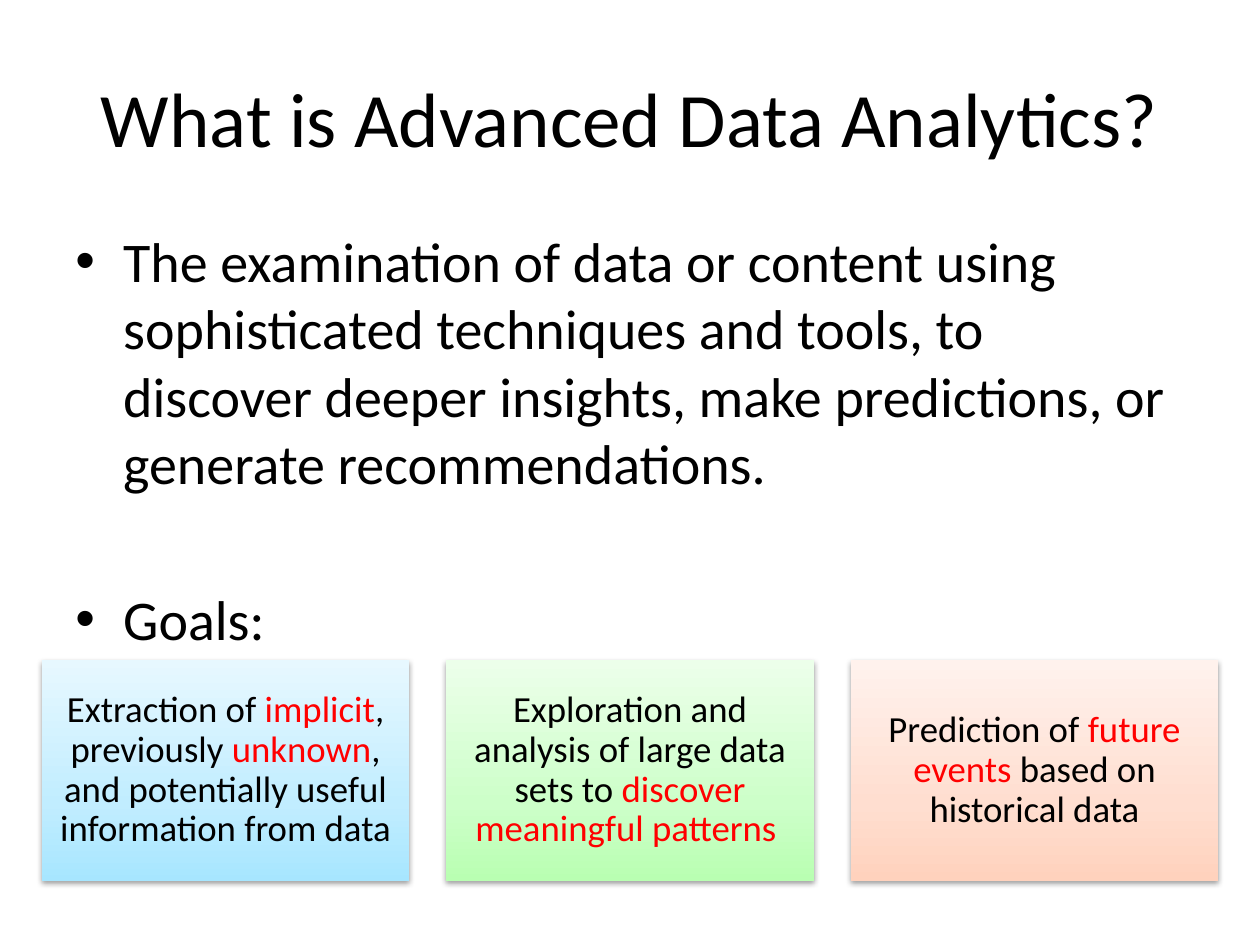
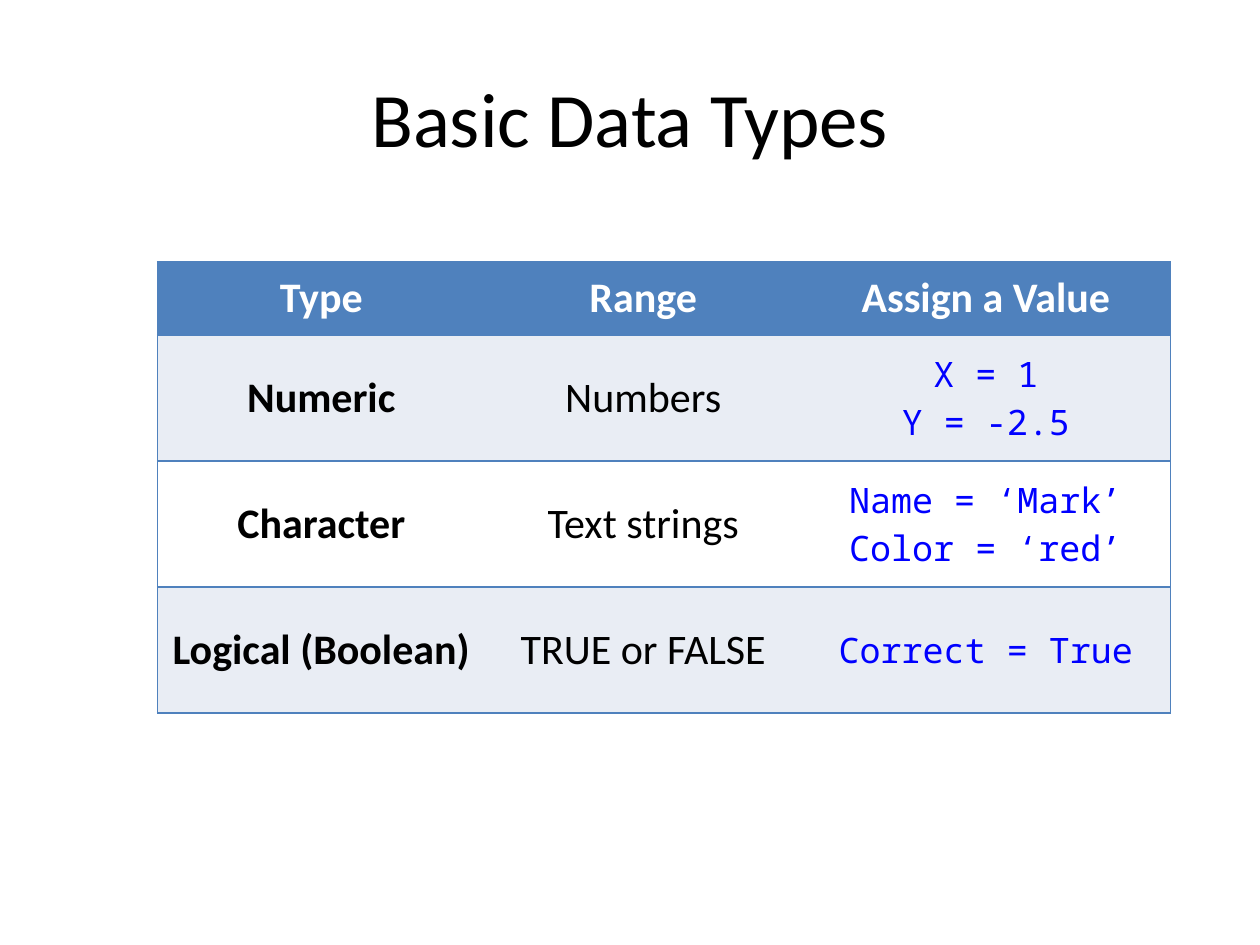
"""Build two slides: the goals of data analytics and the basic data types."""
from dataclasses import dataclass

from lxml.etree import SubElement as Sub
from pptx import Presentation
from pptx.dml.color import RGBColor as Rgb
from pptx.enum.shapes import MSO_SHAPE as Shape
from pptx.enum.text import MSO_ANCHOR as Anchor, PP_ALIGN as Align
from pptx.oxml.ns import qn
from pptx.util import Inches as In, Pt


@dataclass(frozen=True)
class Theme:
    sans: str = "Calibri"
    mono: str = "Noto Sans Mono"
    ink: str = "000000"
    paper: str = "FFFFFF"
    mark: str = "FF0000"
    code: str = "0000FF"
    head: str = "4F81BD"
    band: str = "E9EDF4"
    title: int = 44
    body: int = 32
    cell: int = 24
    goal: int = 21
    small: int = 20


T = Theme()
WIDE, HIGH = 10, 7.5
EDGE = WIDE / 20

POINTS = [
    ("The\u00a0examination of data or content using sophisticated techniques and tools, "
     "to discover deeper insights, make predictions, or generate recommendations.", 0),
    ("Goals:", 51),
]
GOALS = [
    (("A7E6FF", "C1EDFF", "E7F8FF"),
     [("Extraction of ", T.ink), ("implicit", T.mark), (", previously ", T.ink),
      ("unknown", T.mark), (", and potentially useful information from data", T.ink)]),
    (("B9FFB2", "CDFFC9", "ECFFEA"),
     [("Exploration and analysis of large data sets to ", T.ink),
      ("discover meaningful patterns ", T.mark)]),
    (("FFD2BD", "FFDED0", "FFF2ED"),
     [("Prediction of ", T.ink), ("future events", T.mark),
      (" based on historical data", T.ink)]),
]
STOPS = (0, 35, 100)
BOX = dict(left=0.33, top=5.24, step=3.21, wide=2.92, high=1.75)

HEADS = ["Type", "Range", "Assign a Value"]
TYPES = [
    ["Numeric", "Numbers", "X = 1\nY = -2.5"],
    ["Character", "Text strings", "Name = ‘Mark’\nColor = ‘red’"],
    ["Logical (Boolean)", "TRUE or FALSE", "Correct = True"],
]
COLS = (2.6, 2.51, 2.93)
ROWS = (0.58, 1, 1, 1)
PLAIN = "{2D5ABB26-0587-4C30-8999-92F81FD0307C}"


def node(top, tag, **attrs):
    return Sub(top, qn(tag), {key: str(val) for key, val in attrs.items()})


def add_run(para, text, size, color=T.ink, font=T.sans, bold=False):
    run = para.add_run()
    run.text = text
    run.font.size, run.font.name, run.font.bold = Pt(size), font, bold
    run.font.color.rgb = Rgb.from_string(color)


def add_para(frame, first, align=Align.CENTER):
    para = frame.paragraphs[0] if first else frame.add_paragraph()
    para.alignment = align
    return para


def add_text(slide, left, top, wide, high, anchor=Anchor.TOP):
    frame = slide.shapes.add_textbox(In(left), In(top), In(wide), In(high)).text_frame
    frame.word_wrap, frame.vertical_anchor = True, anchor
    return frame


def add_slide(deck, title):
    slide = deck.slides.add_slide(deck.slide_layouts[6])
    frame = add_text(slide, EDGE, 0.3, WIDE - 2 * EDGE, HIGH / 6, Anchor.MIDDLE)
    add_run(add_para(frame, True), title, T.title)
    return slide


def add_points(slide):
    frame = add_text(slide, EDGE, 1.75, WIDE - 2 * EDGE, 3.42)
    for num, (text, gap) in enumerate(POINTS):
        para = add_para(frame, num == 0, Align.LEFT)
        para.space_before = Pt(gap)
        props = para._p.get_or_add_pPr()
        props.set("marL", str(In(0.38)))
        props.set("indent", str(In(-0.38)))
        node(props, "a:buFont", typeface="Arial")
        node(props, "a:buChar", char="•")
        add_run(para, text, T.body)


def shade(box, colors):
    box.fill.gradient()
    box.fill.gradient_angle = 90
    box.line.fill.background()
    box.shadow.inherit = False
    props = box._element.spPr
    stops = props.find(".//" + qn("a:gsLst"))
    stops.clear()
    for pos, color in zip(STOPS, colors):
        node(node(stops, "a:gs", pos=pos * 1000), "a:srgbClr", val=color)
    glow = node(props.find(qn("a:effectLst")), "a:outerShdw", blurRad=Pt(3.1),
                dist=Pt(1.6), dir=90 * 60000, rotWithShape=0)
    node(node(glow, "a:srgbClr", val=T.ink), "a:alpha", val=38000)


def add_goals(slide):
    for num, (colors, parts) in enumerate(GOALS):
        box = slide.shapes.add_shape(
            Shape.RECTANGLE, In(BOX["left"] + num * BOX["step"]), In(BOX["top"]),
            In(BOX["wide"]), In(BOX["high"]))
        shade(box, colors)
        frame = box.text_frame
        frame.word_wrap, frame.vertical_anchor = True, Anchor.MIDDLE
        frame.margin_left = frame.margin_right = In(0.09)
        frame.margin_top = frame.margin_bottom = In(0.09)
        para = add_para(frame, True)
        para.line_spacing = 0.9
        for text, color in parts:
            add_run(para, text, T.goal, color)


def rule(cell, sides):
    props = cell._tc.get_or_add_tcPr()
    for num, side in enumerate(sides):
        line = node(props, "a:ln" + side, w=Pt(1))
        node(node(line, "a:solidFill"), "a:srgbClr", val=T.head)
        props.insert(num, line)


def style(row, col):
    if row == 0:
        return dict(size=T.cell, color=T.paper, bold=True)
    if col == len(COLS) - 1:
        return dict(size=T.small, color=T.code, font=T.mono)
    return dict(size=T.cell, bold=col == 0)


def add_types(slide):
    grid = slide.shapes.add_table(len(ROWS), len(COLS), In(1.25), In(2.08),
                                  In(sum(COLS)), In(sum(ROWS))).table
    grid._tbl.tblPr.find(qn("a:tableStyleId")).text = PLAIN
    for col, wide in zip(grid.columns, COLS):
        col.width = In(wide)
    for row, high in zip(grid.rows, ROWS):
        row.height = In(high)
    for row, texts in enumerate([HEADS] + TYPES):
        fill = T.head if row == 0 else T.band if row % 2 else T.paper
        for col, text in enumerate(texts):
            cell = grid.cell(row, col)
            cell.vertical_anchor = Anchor.MIDDLE
            cell.margin_left = cell.margin_right = In(0.07)
            cell.margin_top = cell.margin_bottom = 0
            cell.fill.solid()
            cell.fill.fore_color.rgb = Rgb.from_string(fill)
            rule(cell, ("L" * (col == 0)) + ("R" * (col == len(COLS) - 1)) + "TB")
            for num, part in enumerate(text.split("\n")):
                add_run(add_para(cell.text_frame, num == 0), part, **style(row, col))


def main():
    deck = Presentation()
    deck.slide_width, deck.slide_height = In(WIDE), In(HIGH)
    slide = add_slide(deck, "What is Advanced Data Analytics?")
    add_points(slide)
    add_goals(slide)
    add_types(add_slide(deck, "Basic Data Types"))
    deck.save("out.pptx")


if __name__ == "__main__":
    main()
